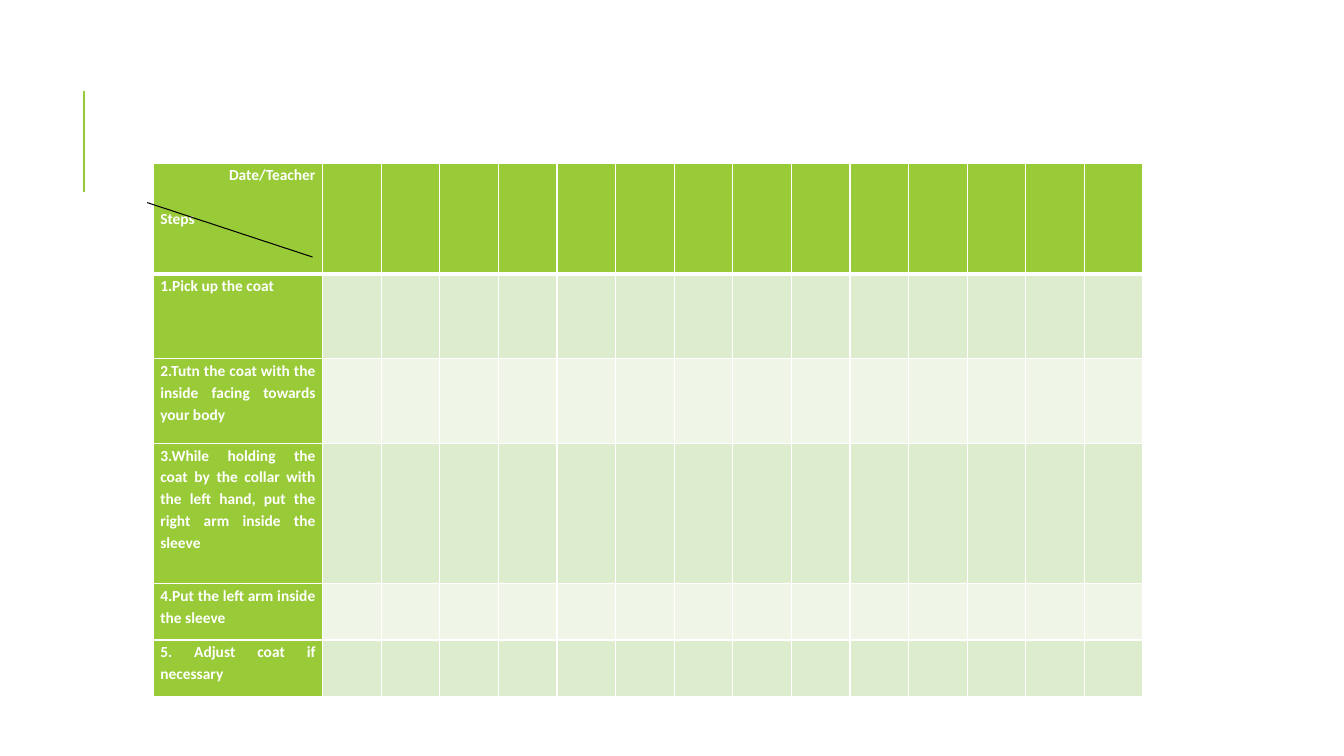
from pptx import Presentation
from pptx.dml.color import RGBColor
from pptx.enum.shapes import MSO_CONNECTOR
from pptx.enum.text import PP_ALIGN
from pptx.oxml import parse_xml
from pptx.oxml.ns import nsdecls
from pptx.util import Inches, Pt

STRAIGHT = MSO_CONNECTOR.STRAIGHT
JUSTIFY, RIGHT = PP_ALIGN.JUSTIFY, PP_ALIGN.RIGHT
GREEN = RGBColor(0x99, 0xCB, 0x38)
PALE_GREEN = RGBColor(0xDE, 0xEC, 0xCE)
FAINT_GREEN = RGBColor(0xEF, 0xF6, 0xE8)
WHITE = RGBColor(0xFF, 0xFF, 0xFF)
BLACK = RGBColor(0, 0, 0)

TABLE_WIDTH = 9.82
STEP_WIDTH = 1.68
SESSIONS = 14
ROW_HEIGHTS = [1.1, 0.84, 0.84, 1.39, 0.56, 0.56]
STEPS = [
    "1.Pick up the coat",
    "2.Tutn the coat with the inside facing towards your body",
    "3.While holding the coat by the collar with the left hand, "
    "put the right arm inside the sleeve",
    "4.Put the left arm inside the sleeve",
    "5. Adjust coat if necessary",
]


class ChecklistSlide:
    font = "Calibri"
    size = Pt(11)
    line_spacing = 1.15
    blank_line = Pt(15.4)

    def __init__(self, presentation):
        self.slide = presentation.slides.add_slide(presentation.slide_layouts[6])

    def line(self, start, end, color, width):
        connector = self.slide.shapes.add_connector(
            STRAIGHT, *(Inches(value) for value in start + end))
        connector.line.color.rgb = color
        connector.line.width = Pt(width)
        connector._element.spPr.append(parse_xml(f"<a:effectLst {nsdecls('a')}/>"))

    def label_cell(self, cell, text):
        cell.text_frame.text = text
        for paragraph in cell.text_frame.paragraphs:
            paragraph.alignment = JUSTIFY
            paragraph.line_spacing = self.line_spacing
            for run in paragraph.runs:
                run.font.name = self.font
                run.font.size = self.size
                run.font.bold = True
                run.font.color.rgb = WHITE

    def style_cell(self, cell, fill, top, bottom):
        cell.margin_left = cell.margin_right = Inches(0.07)
        cell.margin_top = cell.margin_bottom = 0
        properties = cell._tc.get_or_add_tcPr()
        for side, width in (("L", 1), ("R", 1), ("T", top), ("B", bottom)):
            properties.append(parse_xml(
                f'<a:ln{side} {nsdecls("a")} w="{Pt(width)}"><a:solidFill>'
                f'<a:srgbClr val="{WHITE}"/></a:solidFill></a:ln{side}>'))
        cell.fill.solid()
        cell.fill.fore_color.rgb = fill

    def checklist(self, left, top):
        table = self.slide.shapes.add_table(
            len(ROW_HEIGHTS), SESSIONS + 1, Inches(left), Inches(top),
            Inches(TABLE_WIDTH), Inches(sum(ROW_HEIGHTS))).table
        session_width = (TABLE_WIDTH - STEP_WIDTH) / SESSIONS
        for index, column in enumerate(table.columns):
            column.width = Inches(session_width if index else STEP_WIDTH)
        for index, (row, height) in enumerate(zip(table.rows, ROW_HEIGHTS)):
            row.height = Inches(height)
            band = PALE_GREEN if index % 2 else FAINT_GREEN
            for position, cell in enumerate(row.cells):
                heading = index == 0 or position == 0
                self.style_cell(cell, GREEN if heading else band,
                                top=3 if index == 1 else 1,
                                bottom=3 if index == 0 else 1)
        for index, step in enumerate(STEPS, 1):
            self.label_cell(table.cell(index, 0), step)
        corner = table.cell(0, 0)
        self.label_cell(corner, "Date/Teacher\nSteps")
        date_label, steps_label = corner.text_frame.paragraphs
        date_label.alignment = RIGHT
        steps_label.space_before = self.blank_line


def main():
    presentation = Presentation()
    presentation.slide_width = Inches(13.33)
    presentation.slide_height = Inches(7.5)
    page = ChecklistSlide(presentation)
    page.line((0.83, 1.9), (0.83, 0.9), GREEN, 1.5)
    page.checklist(1.52, 1.62)
    page.line((1.46, 2.01), (3.1, 2.55), BLACK, 0.75)
    presentation.save("out.pptx")


if __name__ == "__main__":
    main()
